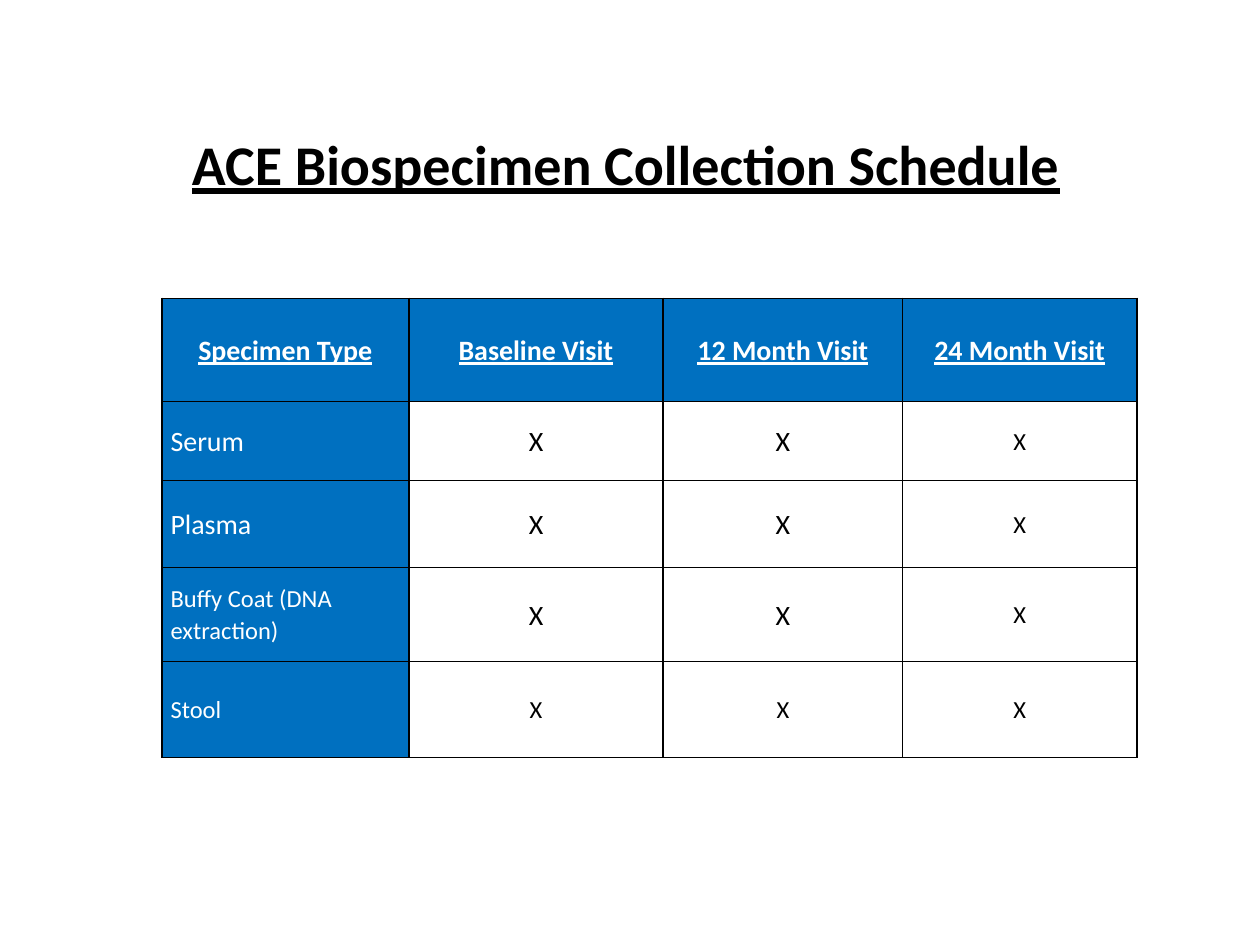
from lxml import etree
from pptx import Presentation
from pptx.dml.color import RGBColor
from pptx.enum.text import MSO_ANCHOR, PP_ALIGN
from pptx.oxml.ns import qn
from pptx.util import Pt

CENTER, LEFT = PP_ALIGN.CENTER, PP_ALIGN.LEFT
MIDDLE = MSO_ANCHOR.MIDDLE
BLACK = RGBColor(0x00, 0x00, 0x00)
WHITE = RGBColor(0xFF, 0xFF, 0xFF)
BLUE = RGBColor(0x00, 0x70, 0xC0)
FONT = "Calibri"

COLUMN_WIDTHS = [141.1, 145.4, 136.8, 133.9]
ROW_HEIGHTS = [58.9, 45.1, 49.7, 53.7, 54.9]
HEADERS = ["Specimen Type", "Baseline Visit", "12 Month Visit", "24 Month Visit"]
SPECIMENS = [
    ("Serum", [16, 16, 16, 14]),
    ("Plasma", [16, 16, 16, 14]),
    ("Buffy Coat (DNA extraction)", [14, 16, 16, 14]),
    ("Stool", [14, 14, 14, 14]),
]


def format_paragraph(paragraph, size, color, heading, alignment, spacing):
    paragraph.alignment = alignment
    paragraph.line_spacing = spacing
    for run in paragraph.runs:
        run.font.name = FONT
        run.font.size = Pt(size)
        run.font.color.rgb = color
        run.font.bold = heading
        run.font.underline = heading


def add_borders(cell):
    properties = cell._tc.get_or_add_tcPr()
    for side in ("a:lnL", "a:lnR", "a:lnT", "a:lnB"):
        line = etree.SubElement(properties, qn(side), w=str(Pt(1)))
        fill = etree.SubElement(line, qn("a:solidFill"))
        etree.SubElement(fill, qn("a:srgbClr"), val=str(BLACK))


presentation = Presentation()
presentation.slide_width = Pt(720)
presentation.slide_height = Pt(540)
slide = presentation.slides.add_slide(presentation.slide_layouts[5])

title = slide.shapes.title
title.left, title.top, title.width, title.height = Pt(15), Pt(47), Pt(685.5), Pt(97)
title.text_frame.text = "ACE Biospecimen Collection Schedule"
title.text_frame.vertical_anchor = MIDDLE
format_paragraph(title.text_frame.paragraphs[0], 32, BLACK, True, CENTER, 0.9)

table = slide.shapes.add_table(
    len(ROW_HEIGHTS), len(COLUMN_WIDTHS), Pt(92.5), Pt(170.5),
    Pt(sum(COLUMN_WIDTHS)), Pt(sum(ROW_HEIGHTS))).table
table.first_row = False
table.horz_banding = False
for column, width in zip(table.columns, COLUMN_WIDTHS):
    column.width = Pt(width)
for row, height in zip(table.rows, ROW_HEIGHTS):
    row.height = Pt(height)

rows = [(HEADERS, [16] * len(HEADERS))]
rows += [([specimen, "X", "X", "X"], sizes) for specimen, sizes in SPECIMENS]
for row_index, (texts, sizes) in enumerate(rows):
    for column_index, (text, size) in enumerate(zip(texts, sizes)):
        heading = row_index == 0
        blue = heading or column_index == 0
        cell = table.cell(row_index, column_index)
        cell.margin_left = cell.margin_right = Pt(5)
        cell.margin_top = cell.margin_bottom = 0
        cell.vertical_anchor = MIDDLE
        add_borders(cell)
        if blue:
            cell.fill.solid()
            cell.fill.fore_color.rgb = BLUE
        else:
            cell.fill.background()
        cell.text_frame.text = text
        format_paragraph(
            cell.text_frame.paragraphs[0], size, WHITE if blue else BLACK, heading,
            CENTER if heading or column_index else LEFT, 1.07)

presentation.save("out.pptx")
